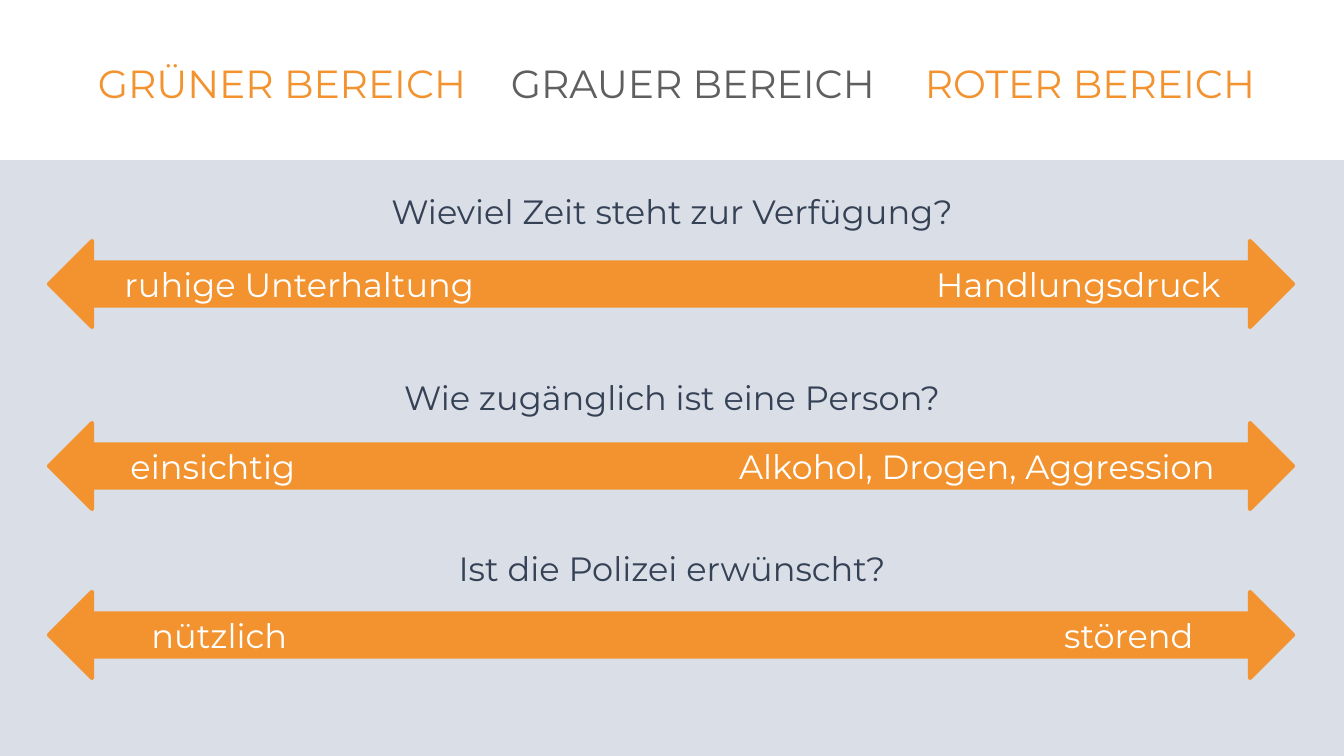
from lxml import etree
from pptx import Presentation
from pptx import util as u
from pptx.dml.color import RGBColor
from pptx.enum import shapes, text
from pptx.oxml.ns import qn

WIDTH, HEIGHT = 1344, 756
ORANGE, GREY, NAVY, WHITE, MIST = "F2932F", "5F5F5F", "354155", "FFFFFF", "DADEE6"
PLAIN_TABLE = "{2D5ABB26-0587-4C30-8999-92F81FD0307C}"


def px(length):
    return u.Emu(round(length * 12192000 / WIDTH))


def colour(value):
    return RGBColor.from_string(value)


class Board:
    """Holds the style and the current slide."""
    font = "Montserrat"

    def __init__(self, deck):
        self.slide = deck.slides.add_slide(deck.slide_layouts[6])
        background = self.slide.background.fill
        background.solid()
        background.fore_color.rgb = colour(MIST)

    def style(self, run, size, ink):
        run.font.name = self.font
        run.font.size = u.Pt(size)
        run.font.color.rgb = colour(ink)

    def tabs(self, paragraph, *stops):
        tab_list = etree.SubElement(paragraph._p.get_or_add_pPr(), qn("a:tabLst"))
        for position, side in stops:
            etree.SubElement(tab_list, qn("a:tab"), pos=str(px(position)), algn=side)

    def block(self, kind, box, fill, line_width):
        shape = self.slide.shapes.add_shape(kind, *map(px, box))
        shape.shadow.inherit = False
        shape.fill.solid()
        shape.fill.fore_color.rgb = colour(fill)
        shape.line.color.rgb = colour(fill)
        shape.line.width = u.Pt(line_width)
        return shape

    def heading(self, box, parts, stops):
        frame = self.slide.shapes.add_textbox(*map(px, box)).text_frame
        frame.word_wrap = True
        frame.vertical_anchor = text.MSO_ANCHOR.MIDDLE
        line = frame.paragraphs[0]
        line.line_spacing = 0.9
        self.tabs(line, *[(stop, "l") for stop in stops])
        for index, (words, ink) in enumerate(parts):
            run = line.add_run()
            run.text = "\t" + words if index else words
            self.style(run, 28, ink)

    def questions(self, box, columns, rows, merged, entries):
        frame = self.slide.shapes.add_table(len(rows), len(columns), *map(px, box))
        table = frame.table
        table.first_row = table.horz_banding = False
        table._tbl.tblPr.find(qn("a:tableStyleId")).text = PLAIN_TABLE
        for column, width in zip(table.columns, columns):
            column.width = px(width)
        for row, height in zip(table.rows, rows):
            row.height = px(height)
        for cell in table.iter_cells():
            cell.fill.background()
        for row in merged:
            table.cell(row, 0).merge(table.cell(row, len(columns) - 1))
        for row, words in entries.items():
            cell = table.cell(row, 0)
            cell.vertical_anchor = text.MSO_ANCHOR.MIDDLE
            line = cell.text_frame.paragraphs[0]
            line.text = words
            line.alignment = text.PP_ALIGN.CENTER
            self.style(line.runs[0], 24, NAVY)

    def scale(self, top, start, left_pole, right_pole):
        """Double arrow whose two labels stand equally far from its ends."""
        left, height = 49, 86
        arrow = self.block(shapes.MSO_SHAPE.LEFT_RIGHT_ARROW,
                           (left, top, WIDTH - 2 * left - 2, height), ORANGE, 3)
        frame = arrow.text_frame
        frame.word_wrap = True
        frame.vertical_anchor = text.MSO_ANCHOR.MIDDLE
        frame.margin_left = px(start - left - height // 4)
        frame.margin_right = 0
        line = frame.paragraphs[0]
        line.text = f"{left_pole}\t{right_pole}"
        line.alignment = text.PP_ALIGN.LEFT
        self.tabs(line, (WIDTH - 2 * start, "r"))
        self.style(line.runs[0], 24, WHITE)


def main():
    deck = Presentation()
    deck.slide_width, deck.slide_height = px(WIDTH), px(HEIGHT)
    board = Board(deck)

    # Header band with the three areas
    board.block(shapes.MSO_SHAPE.RECTANGLE, (0, 0, WIDTH, 159), WHITE, 1)
    board.heading((88, 60, 1200, 51),
                  [("GRÜNER BEREICH", ORANGE), ("GRAUER BEREICH", GREY),
                   ("ROTER BEREICH", ORANGE)], (413, 827))

    # Questions, each spanning the full width
    board.questions((0, 163, WIDTH, 681), (392, 476, 476),
                    (98, 81, 112, 60, 111, 121, 98), (0, 1, 2, 4, 5),
                    {0: "Wieviel Zeit steht zur Verfügung?",
                     2: "Wie zugänglich ist eine Person?",
                     4: "Ist die Polizei erwünscht?"})

    # Scales between the two poles of each question
    for top, start, left_pole, right_pole in (
            (241, 124, "ruhige Unterhaltung", "Handlungsdruck"),
            (423, 130, "einsichtig", "Alkohol, Drogen, Aggression"),
            (592, 151, "nützlich", "störend")):
        board.scale(top, start, left_pole, right_pole)

    deck.save("out.pptx")


if __name__ == "__main__":
    main()
